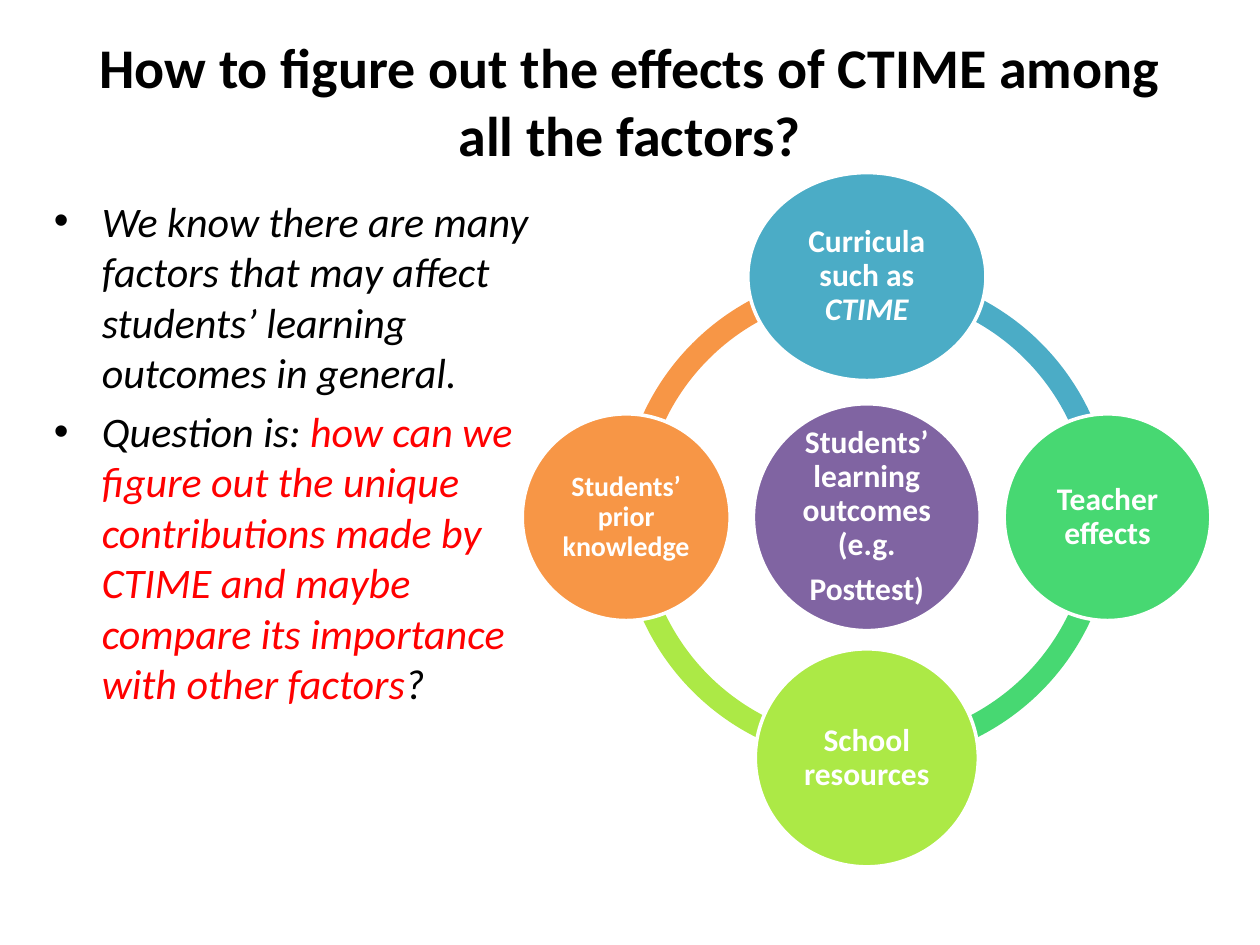
"""Build a slide with a question and a ring of factors around learning outcomes."""
from math import cos, pi, sin
from pptx import Presentation, util as u
from pptx.dml.color import RGBColor
from pptx.enum import shapes, text
from pptx.oxml import parse_xml
from pptx.oxml.ns import nsdecls

COLS, ROWS = 100, 75
deck = Presentation()
deck.slide_width, deck.slide_height = u.Inches(10), u.Inches(7.5)
slide = deck.slides.add_slide(deck.slide_layouts[6])
col, row = deck.slide_width / COLS, deck.slide_height / ROWS


def box(x, y, w, h):
    return [round(n) for n in (x * col, y * row, w * col, h * row)]


def write(para, words, size, color, bold=False, slant=False):
    run = para.add_run()
    run.text = words
    font = run.font
    font.name, font.size, font.bold, font.italic = "Calibri", u.Pt(size), bold, slant
    font.color.rgb = RGBColor.from_string(color)


midx, midy, reach, ring = 68.8, 41.05, 19.1, 39.1
nodes = [
    ("4BACC6", 18.9, 16.5, 18, [[("Curricula such as ", False), ("CTIME", True)]]),
    ("47D872", 16.4, 16.4, 18, [[("Teacher effects", False)]]),
    ("ACE946", 17.7, 17.3, 18, [[("School resources", False)]]),
    ("F79646", 16.5, 16.4, 16, [[("Students’ prior knowledge", False)]]),
]
core = ("8064A2", 18, 18, 18,
        [[("Students’ learning outcomes (e.g.", False)], [("Posttest)", False)]])

for i, node in reversed(list(enumerate(nodes))):
    arc = slide.shapes.add_shape(
        shapes.MSO_SHAPE.BLOCK_ARC,
        *box(midx - ring / 2, midy - ring / 2, ring, ring))
    start = (162 + 54 * i) % 216
    for j, val in enumerate((start, (start + 54) % 216, 0.046)):
        arc.adjustments[j] = val
    arc.shadow.inherit = False
    arc.fill.solid()
    arc.fill.fore_color.rgb = RGBColor.from_string(node[0])
    arc.line.fill.background()

for i, (color, w, h, size, paras) in enumerate([core] + nodes):
    dist, turn = (reach if i else 0), (i - 2) * pi / 2
    x, y = midx + dist * cos(turn), midy + dist * sin(turn)
    disc = slide.shapes.add_shape(
        shapes.MSO_SHAPE.OVAL, *box(x - w / 2, y - h / 2, w, h))
    disc.shadow.inherit = False
    disc.fill.solid()
    disc.fill.fore_color.rgb = RGBColor.from_string(color)
    disc.line.color.rgb = RGBColor.from_string("FFFFFF")
    disc.line.width = u.Pt(2)
    frame = disc.text_frame
    frame.word_wrap = True
    frame.vertical_anchor = text.MSO_ANCHOR.MIDDLE
    frame.margin_left = frame.margin_right = u.Inches(0.03)
    frame.margin_top = frame.margin_bottom = u.Inches(0.03)
    for j, runs in enumerate(paras):
        para = frame.add_paragraph() if j else frame.paragraphs[0]
        para.alignment = text.PP_ALIGN.CENTER
        para.line_spacing, para.space_after = 0.9, u.Pt(0.35 * size)
        for words, slant in runs:
            write(para, words, size, "FFFFFF", True, slant)

frame = slide.shapes.add_textbox(*box(5, 1.7, 90, 12.5)).text_frame
frame.word_wrap = True
frame.vertical_anchor = text.MSO_ANCHOR.MIDDLE
para = frame.paragraphs[0]
para.alignment = text.PP_ALIGN.CENTER
write(para, "How to figure out the effects of CTIME among all the factors?",
      32, "000000", True)

points = [
    [("We know there are many factors that may affect students’ learning "
      "outcomes in general.", "000000")],
    [("Question is: ", "000000"),
     ("how can we figure out the unique contributions made by CTIME and maybe "
      "compare its importance with other factors", "FF0000"),
     ("?", "000000")],
]
frame = slide.shapes.add_textbox(*box(3.3, 15, 41.2, 49.5)).text_frame
frame.word_wrap = True
for j, runs in enumerate(points):
    para = frame.add_paragraph() if j else frame.paragraphs[0]
    para.space_before = u.Pt(5)
    props = para._p.get_or_add_pPr()
    props.set("marL", str(u.Inches(0.38)))
    props.set("indent", str(u.Inches(-0.38)))
    for tag in ('buFont %s typeface="Arial"', 'buChar %s char="•"'):
        props.append(parse_xml("<a:" + tag % nsdecls("a") + "/>"))
    for words, color in runs:
        write(para, words, 24, color, slant=True)

deck.save("out.pptx")
